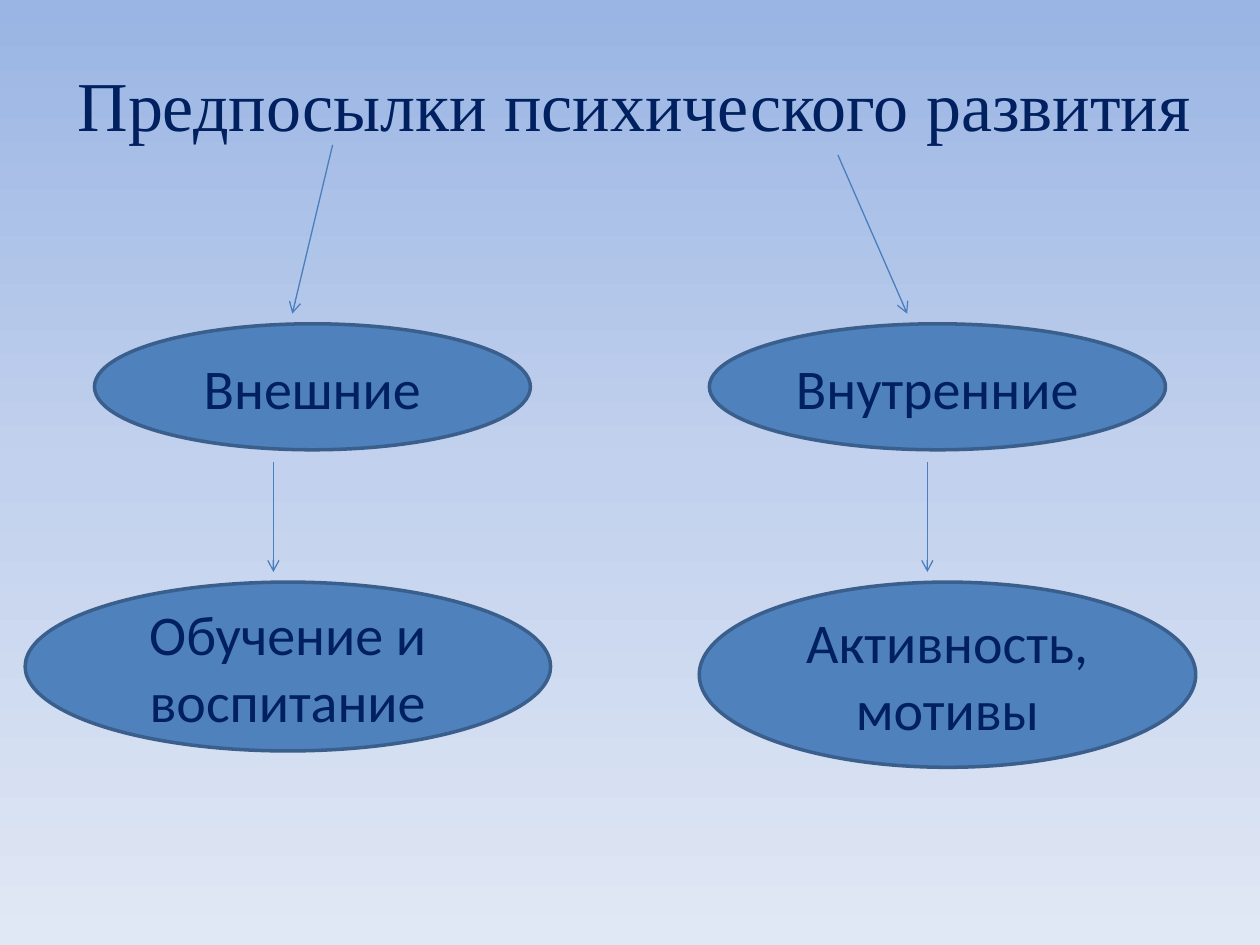
from lxml import etree
from pptx import Presentation
from pptx.dml.color import RGBColor
from pptx.enum.shapes import MSO_CONNECTOR as Link, MSO_SHAPE as Shape
from pptx.enum.text import MSO_ANCHOR as Anchor, PP_ALIGN as Align
from pptx.oxml.ns import qn
from pptx.util import Inches, Pt


def rgb(code):
    return RGBColor.from_string(code)


class Deck:
    ink, fill, edge, wire = "002060", "4F81BD", "3A5F8C", "4B7EBC"
    serif, sans = "Times New Roman", "Calibri"

    def __init__(self, wide, high):
        self.prs = Presentation()
        self.prs.slide_width, self.prs.slide_height = Inches(wide), Inches(high)
        self.slide = self.prs.slides.add_slide(self.prs.slide_layouts[6])

    def shade(self, stops):
        fill = self.slide.background.fill
        fill.gradient()
        fill.gradient_angle = 270
        grad = self.slide.element.find(".//" + qn("a:gsLst"))
        for old in list(grad):
            grad.remove(old)
        for pos, code in stops:
            stop = etree.SubElement(grad, qn("a:gs"), pos=str(pos * 1000))
            etree.SubElement(stop, qn("a:srgbClr"), val=code)

    def label(self, frame, runs, size, face):
        frame.word_wrap = True
        par = frame.paragraphs[0]
        par.alignment = Align.CENTER
        for text, code in runs:
            run = par.add_run()
            run.text = text
            run.font.size, run.font.name = Pt(size), face
            run.font.color.rgb = rgb(code)

    def title(self, box, runs):
        area = self.slide.shapes.add_textbox(*map(Inches, box))
        self.label(area.text_frame, runs, 40, self.serif)

    def oval(self, box, text):
        item = self.slide.shapes.add_shape(Shape.OVAL, *map(Inches, box))
        item.shadow.inherit = False
        item.fill.solid()
        item.fill.fore_color.rgb = rgb(self.fill)
        item.line.color.rgb = rgb(self.edge)
        item.line.width = Pt(2)
        item.text_frame.vertical_anchor = Anchor.MIDDLE
        self.label(item.text_frame, [(text, self.ink)], 32, self.sans)

    def arrow(self, start, end):
        wire = self.slide.shapes.add_connector(
            Link.STRAIGHT, *map(Inches, start + end))
        wire.line.color.rgb = rgb(self.wire)
        wire.line.width = Pt(0.75)
        props = wire.element.spPr
        etree.SubElement(props.find(qn("a:ln")), qn("a:tailEnd"), type="arrow")
        etree.SubElement(props, qn("a:effectLst"))


def main():
    deck = Deck(10, 7.5)
    deck.shade([(0, "9AB5E4"), (50, "C2D1ED"), (100, "E1E8F5")])

    # Title
    deck.title((0.2, 0.44, 9.53, 1.08),
               [(" ", "000000"), ("Предпосылки психического развития", deck.ink)])

    # Arrows from the title to the two kinds
    deck.arrow((2.64, 1.15), (2.32, 2.49))
    deck.arrow((6.65, 1.23), (7.2, 2.49))

    # Kinds
    for left, width, text in [(0.75, 3.46, "Внешние"), (5.63, 3.62, "Внутренние")]:
        deck.oval((left, 2.57, width, 1), text)

    # Arrows from the kinds down to their content
    for x in (2.17, 7.36):
        deck.arrow((x, 3.67), (x, 4.54))

    # Content
    for left, width, high, text in [(0.2, 4.17, 1.34, "Обучение и воспитание"),
                                    (5.55, 3.94, 1.47, "Активность, мотивы")]:
        deck.oval((left, 4.62, width, high), text)

    deck.prs.save("out.pptx")


if __name__ == "__main__":
    main()
